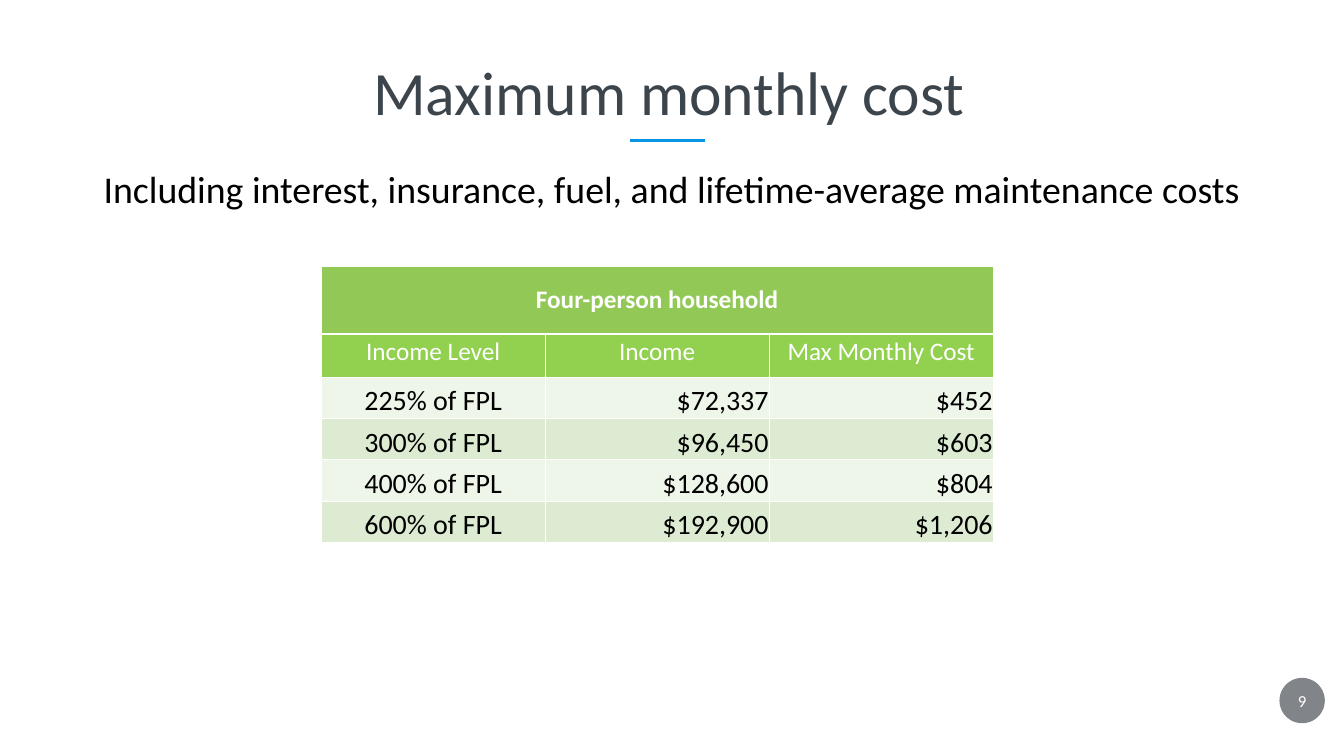
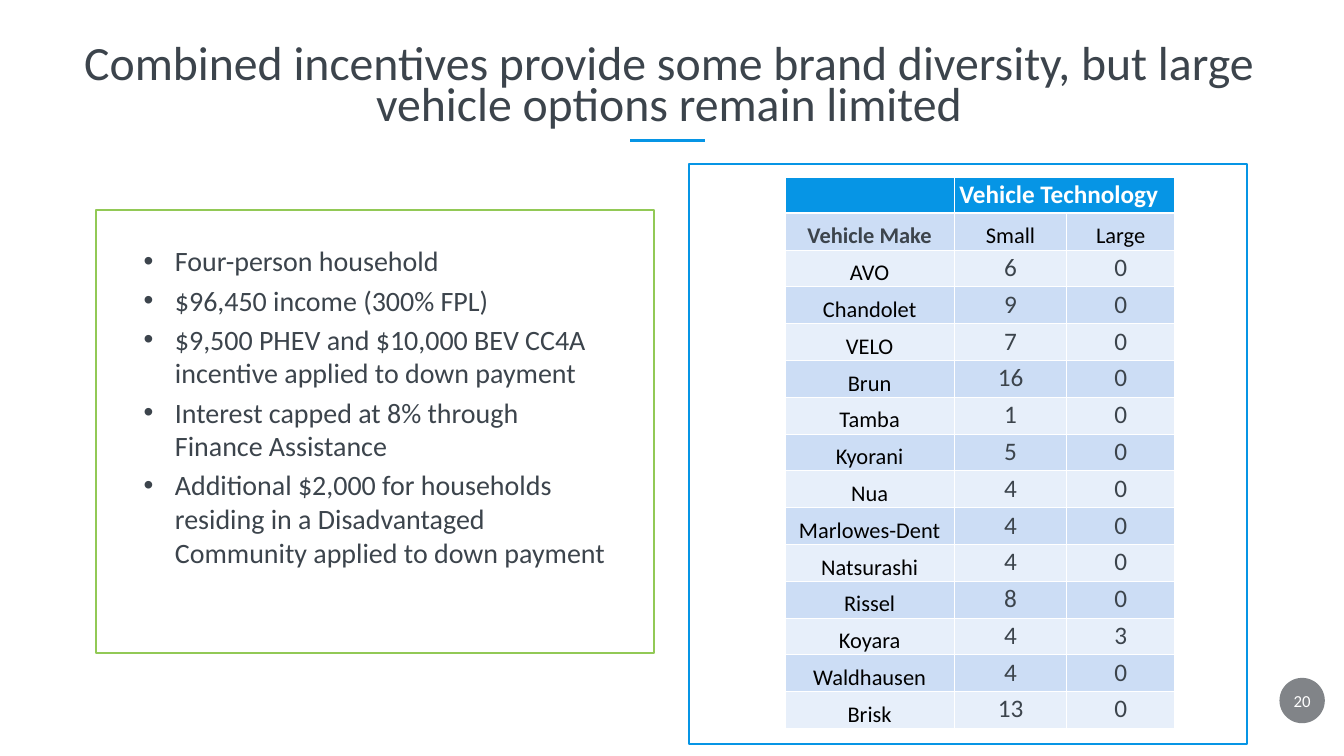
from collections import namedtuple
from dataclasses import dataclass

from lxml.etree import SubElement
from pptx import Presentation
from pptx.dml.color import RGBColor
from pptx.enum.shapes import MSO_CONNECTOR, MSO_SHAPE
from pptx.enum.text import MSO_ANCHOR, PP_ALIGN
from pptx.oxml import parse_xml
from pptx.oxml.ns import nsdecls, qn
from pptx.util import Inches, Pt

Box = namedtuple("Box", "left top width height")


@dataclass(frozen=True)
class Theme:
    font: str = "Calibri"
    # Colours
    ink: str = "3C444C"
    black: str = "000000"
    white: str = "FFFFFF"
    badge: str = "2D3339"
    blue: str = "0695E5"
    blue_bands: tuple = ("CCDDF5", "E7EFFA")
    green: str = "92C956"
    green_header: str = "92D050"
    green_bands: tuple = ("EEF5E9", "DCEBD1")
    # Type sizes
    title: float = 88
    long_title: float = 68.2
    subtitle: float = 54
    body: float = 40
    table: float = 36
    label: float = 32
    number: float = 24


THEME = Theme()
SLIDE = Box(0, 0, 26.66, 15)
TITLE = Box(1.5, 0.82, 23.54, 1.79)
BADGE = Box(25.38, 13.45, 0.9, 0.9)
TIGHT = (0.01, 0.01, 0.01, 0)

COST_ROWS = [
    ("225% of FPL", "$72,337", "$452"),
    ("300% of FPL", "$96,450", "$603"),
    ("400% of FPL", "$128,600", "$804"),
    ("600% of FPL", "$192,900", "$1,206"),
]
ASSUMPTIONS = [
    "Four-person household",
    "$96,450 income (300% FPL)",
    "$9,500 PHEV and $10,000 BEV CC4A incentive applied to down payment",
    "Interest capped at 8% through Finance Assistance",
    "Additional $2,000 for households residing in a Disadvantaged "
    "Community applied to down payment",
]
MAKE_ROWS = [
    ("AVO", 6, 0), ("Chandolet", 9, 0), ("VELO", 7, 0), ("Brun", 16, 0),
    ("Tamba", 1, 0), ("Kyorani", 5, 0), ("Nua", 4, 0),
    ("Marlowes-Dent", 4, 0), ("Natsurashi", 4, 0), ("Rissel", 8, 0),
    ("Koyara", 4, 3), ("Waldhausen", 4, 0), ("Brisk", 13, 0),
]


def color(value):
    return RGBColor.from_string(value)


def inches(box):
    return [Inches(length) for length in box]


def set_margins(target, margins):
    (target.margin_left, target.margin_top,
     target.margin_right, target.margin_bottom) = inches(margins)


def write(paragraph, text, *, size, ink=THEME.ink, bold=False,
          align=PP_ALIGN.LEFT, line_spacing=None, space_before=0, bullet=None):
    """Write one formatted paragraph."""
    if bullet:
        properties = paragraph._p.get_or_add_pPr()
        properties.set("marL", str(Inches(0.62)))
        properties.set("indent", str(Inches(-0.62)))
        SubElement(properties, qn("a:buFont")).set("typeface", "Arial")
        SubElement(properties, qn("a:buChar")).set("char", bullet)
    paragraph.alignment = align
    paragraph.space_before = Pt(space_before)
    if line_spacing:
        paragraph.line_spacing = line_spacing
    run = paragraph.add_run()
    run.text = str(text)
    font = run.font
    font.name, font.size, font.bold = THEME.font, Pt(size), bold
    font.color.rgb = color(ink)


def add_text(slide, box, texts, *, anchor=MSO_ANCHOR.TOP,
             margins=(0.1, 0.05, 0.1, 0.05), gap=0, **style):
    frame = slide.shapes.add_textbox(*inches(box)).text_frame
    frame.word_wrap = True
    frame.vertical_anchor = anchor
    set_margins(frame, margins)
    for index, text in enumerate(texts):
        paragraph = frame.add_paragraph() if index else frame.paragraphs[0]
        write(paragraph, text, space_before=gap if index else 0, **style)


def add_frame(slide, box, line_color):
    shape = slide.shapes.add_shape(MSO_SHAPE.RECTANGLE, *inches(box))
    shape.shadow.inherit = False
    shape.fill.background()
    shape.line.color.rgb = color(line_color)
    shape.line.width = Pt(3)


# Tables
def set_borders(cell, top=1, bottom=1):
    properties = cell._tc.get_or_add_tcPr()
    sides = (("L", 1), ("R", 1), ("T", top), ("B", bottom))
    for index, (side, width) in enumerate(sides):
        properties.insert(index, parse_xml(
            f'<a:ln{side} {nsdecls("a")} w="{Pt(width)}"><a:solidFill>'
            f'<a:srgbClr val="{THEME.white}"/></a:solidFill></a:ln{side}>'))


def add_table(slide, box, columns, rows):
    """Add a table whose top row is ruled off by a thicker line."""
    table = slide.shapes.add_table(
        len(rows), len(columns), *inches(box)).table
    table.first_row = table.horz_banding = False
    for column, width in zip(table.columns, columns):
        column.width = Inches(width)
    for index, (row, height) in enumerate(zip(table.rows, rows)):
        row.height = Inches(height)
        for cell in row.cells:
            set_borders(cell, top=3 if index == 1 else 1,
                        bottom=1 if index else 3)
    return table


def fill_cell(cell, text, fill, *, anchor=MSO_ANCHOR.TOP, margins=None,
              align=PP_ALIGN.CENTER, **style):
    cell.fill.solid()
    cell.fill.fore_color.rgb = color(fill)
    cell.vertical_anchor = anchor
    if margins:
        set_margins(cell, margins)
    if text != "":
        write(cell.text_frame.paragraphs[0], text, align=align, **style)


def add_cost_table(slide, box):
    table = add_table(slide, box, [box.width / 3] * 3,
                      [1.35, 0.85] + [0.82] * len(COST_ROWS))
    header = {"size": THEME.table, "ink": THEME.white}
    table.cell(0, 0).merge(table.cell(0, 2))
    fill_cell(table.cell(0, 0), "Four-person household", THEME.green,
              anchor=MSO_ANCHOR.MIDDLE, bold=True, **header)
    for column, text in enumerate(("Income Level", "Income", "Max Monthly Cost")):
        fill_cell(table.cell(1, column), text, THEME.green_header, **header)
    for index, values in enumerate(COST_ROWS):
        for column, text in enumerate(values):
            fill_cell(table.cell(index + 2, column), text,
                      THEME.green_bands[index % 2],
                      anchor=MSO_ANCHOR.BOTTOM, margins=TIGHT,
                      align=PP_ALIGN.RIGHT if column else PP_ALIGN.CENTER,
                      size=THEME.body, ink=THEME.black)


def add_make_table(slide, box):
    table = add_table(slide, box, [3.36, 2.23, 2.14],
                      [0.71] + [0.73] * (len(MAKE_ROWS) + 1))
    label = {"anchor": MSO_ANCHOR.BOTTOM, "margins": TIGHT, "size": THEME.label}
    # Header rows
    table.cell(0, 1).merge(table.cell(0, 2))
    fill_cell(table.cell(0, 0), "", THEME.blue)
    fill_cell(table.cell(0, 1), "Vehicle Technology", THEME.blue,
              align=PP_ALIGN.LEFT, size=THEME.table, ink=THEME.white, bold=True)
    for column, text in enumerate(("Vehicle Make", "Small", "Large")):
        fill_cell(table.cell(1, column), text, THEME.blue_bands[0],
                  ink=THEME.black if column else THEME.ink,
                  bold=column == 0, **label)
    # One row for each make
    for index, (make, *counts) in enumerate(MAKE_ROWS, start=1):
        fill = THEME.blue_bands[index % 2]
        fill_cell(table.cell(index + 1, 0), make, fill, ink=THEME.black, **label)
        for column, count in enumerate(counts, start=1):
            fill_cell(table.cell(index + 1, column), count, fill,
                      size=THEME.table)


# Parts shared by the slides
def add_badge(slide, box, number):
    circle = slide.shapes.add_shape(MSO_SHAPE.OVAL, *inches(box))
    circle.shadow.inherit = False
    circle.fill.solid()
    circle.fill.fore_color.rgb = color(THEME.badge)
    fill_color = circle.fill._xPr.find(qn("a:solidFill"))[0]
    SubElement(fill_color, qn("a:alpha")).set("val", "60000")
    circle.line.fill.background()
    add_text(slide, Box(box.left, box.top + 0.05, box.width, box.height - 0.1),
             [number], anchor=MSO_ANCHOR.MIDDLE, align=PP_ALIGN.CENTER,
             size=THEME.number, ink=THEME.white)


def add_title(slide, box, title, size, line_spacing):
    rule_left, rule_top = box.left + 11, box.top + 1.97
    rule = slide.shapes.add_connector(
        MSO_CONNECTOR.STRAIGHT,
        *inches((rule_left, rule_top, rule_left + 1.49, rule_top)))
    rule.line.color.rgb = color(THEME.blue)
    rule.line.width = Pt(3.6)
    SubElement(rule._element.spPr, qn("a:effectLst"))
    add_text(slide, box, [title], anchor=MSO_ANCHOR.BOTTOM, size=size,
             align=PP_ALIGN.CENTER, line_spacing=line_spacing)


def add_slide(presentation, title, number, *, size=THEME.title, line_spacing=0.9):
    slide = presentation.slides.add_slide(presentation.slide_layouts[6])
    add_badge(slide, BADGE, number)
    add_title(slide, TITLE, title, size, line_spacing)
    return slide


# Panels of the incentives slide
def add_assumptions(slide, box):
    add_frame(slide, box, THEME.green)
    add_text(slide, Box(box.left + 0.71, box.top + 0.55, 9.64, 6.84),
             ASSUMPTIONS, margins=(0.24, 0.12, 0.24, 0.12), gap=8,
             size=THEME.body, bullet="•")


def add_makes(slide, box):
    add_frame(slide, box, THEME.blue)
    add_make_table(slide, Box(box.left + 1.9, box.top + 0.26, 7.73, 10.93))


# Slides
def build_cost_slide(presentation, box):
    slide = add_slide(presentation, "Maximum monthly cost", 9)
    add_cost_table(slide, Box(box.left + 6.37, box.top + 5.28, 13.33, 5.47))
    add_text(slide, Box(box.left, box.top + 3.24, box.width, 1.01),
             ["Including interest, insurance, fuel, and lifetime-average "
              "maintenance costs"],
             size=THEME.subtitle, ink=THEME.black, align=PP_ALIGN.CENTER)


def build_incentives_slide(presentation, box):
    slide = add_slide(
        presentation,
        "Combined incentives provide some brand diversity, but large "
        "vehicle options remain limited",
        20, size=THEME.long_title, line_spacing=0.7)
    add_assumptions(slide, Box(box.left + 1.9, box.top + 4.17, 11.07, 8.78))
    add_makes(slide, Box(box.left + 13.67, box.top + 3.26, 11.07, 11.5))


def main():
    presentation = Presentation()
    presentation.slide_width = Inches(SLIDE.width)
    presentation.slide_height = Inches(SLIDE.height)
    build_cost_slide(presentation, SLIDE)
    build_incentives_slide(presentation, SLIDE)
    presentation.save("out.pptx")


if __name__ == "__main__":
    main()
